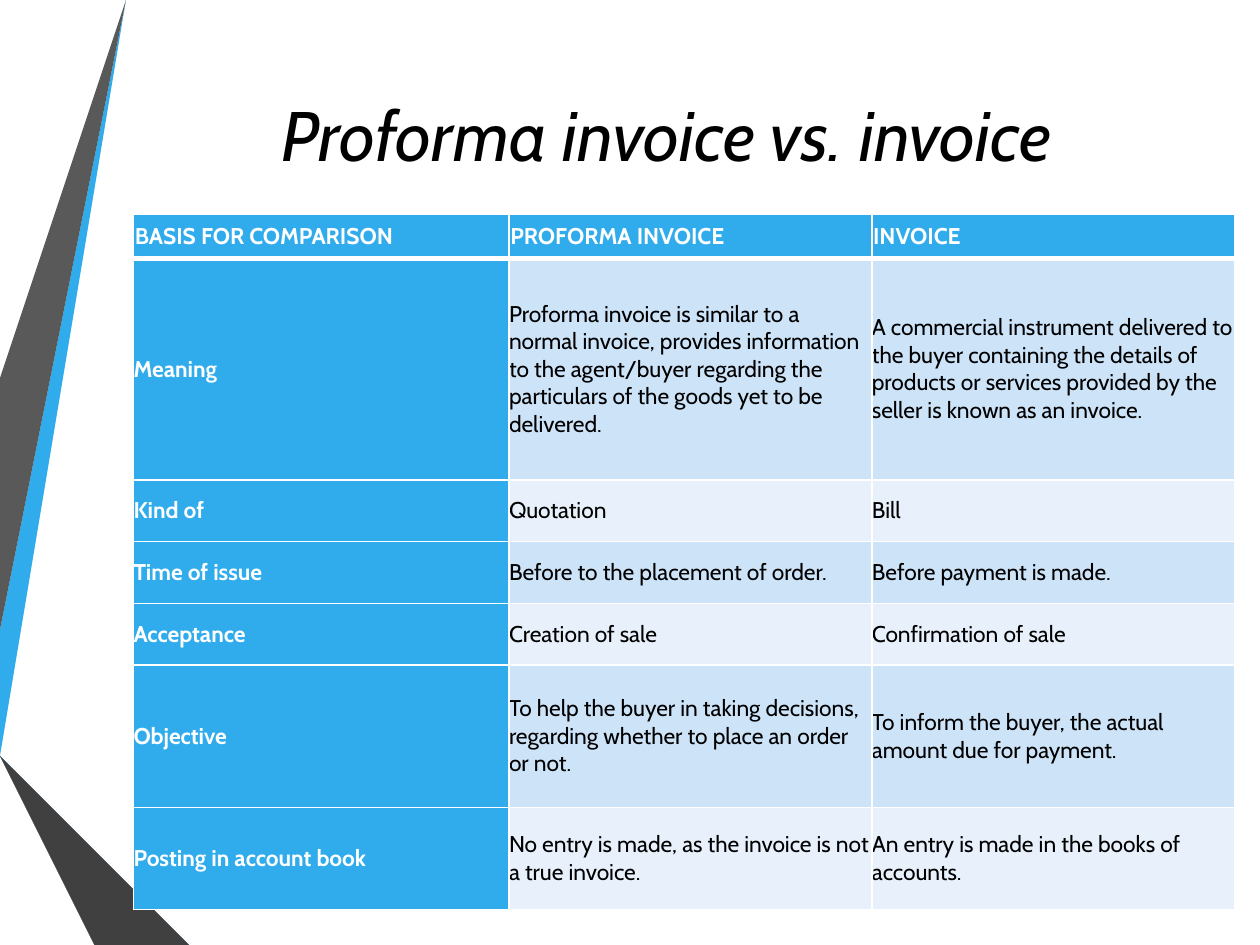
from lxml import etree
from pptx import Presentation
from pptx.dml.color import RGBColor
from pptx.enum.text import MSO_ANCHOR, PP_ALIGN
from pptx.oxml.ns import qn
from pptx.util import Inches, Pt

MIDDLE = MSO_ANCHOR.MIDDLE
CENTER = PP_ALIGN.CENTER
BLUE, WHITE, BLACK = "30ACEC", "FFFFFF", "000000"
BANDS = ["CDE3F8", "E8F1FB"]


def rgb(value):
    return RGBColor.from_string(value)


def write(p, text, color, **formats):
    r = p.add_run()
    r.text = text
    r.font.color.rgb = rgb(color)
    for name, value in {"name": "Cabin", **formats}.items():
        setattr(r.font, name, value)


prs = Presentation()
prs.slide_width, prs.slide_height = Inches(10), Inches(7.5)
s = prs.slides.add_slide(prs.slide_layouts[6])

# Ribbons along the left edge, from back to front, in inches
ribbons = [
    (BLUE, [(0, 5.44), (0, 5.75), (0.22, 5.79), (1.17, 0), (0.89, 0)]),
    ("595959", [(0.83, 0), (0.55, 0), (0, 3.36), (0, 5.06)]),
    ("262626", [(0, 6.19), (0, 6.21), (0.93, 7.5), (0.99, 7.5)]),
    ("0C5A82", [(0, 5.79), (0, 5.8), (1.56, 7.5), (1.63, 7.5)]),
    ("1287C3", [(0, 5.79), (1.63, 7.5), (2.33, 7.5), (0.22, 5.79), (0, 5.75)]),
    ("404040", [(0, 6.19), (0.99, 7.5), (1.51, 7.5), (0, 5.86)]),
]
for color, points in ribbons:
    fb = s.shapes.build_freeform(*points[0], scale=Inches(1))
    fb.add_line_segments(points[1:], close=True)
    sp = fb.convert_to_shape()
    sp.shadow.inherit = False
    sp.fill.solid()
    sp.fill.fore_color.rgb = rgb(color)
    sp.line.fill.background()

# Title
tf = s.shapes.add_textbox(Inches(1.08), Inches(0.5), Inches(8.42), Inches(1.12)).text_frame
tf.word_wrap = True
tf.vertical_anchor = MIDDLE
tf.paragraphs[0].alignment = CENTER
write(tf.paragraphs[0], "Proforma invoice vs. invoice", BLACK, size=Pt(40), italic=True)

# Comparison table
rows = [
    ("BASIS FOR COMPARISON", "PROFORMA INVOICE", "INVOICE"),
    ("Meaning",
     "Proforma invoice is similar to a normal invoice, provides information to the "
     "agent/buyer regarding the particulars of the goods yet to be delivered.",
     "A commercial instrument delivered to the buyer containing the details of products "
     "or services provided by the seller is known as an invoice."),
    ("Kind of", "Quotation", "Bill"),
    ("Time of issue", "Before to the placement of order.", "Before payment is made."),
    ("Acceptance", "Creation of sale", "Confirmation of sale"),
    ("Objective",
     "To help the buyer in taking decisions, regarding whether to place an order or not.",
     "To inform the buyer, the actual amount due for payment."),
    ("Posting in account book",
     "No entry is made, as the invoice is not a true invoice.",
     "An entry is made in the books of accounts."),
]
widths = [2.98, 2.88, 2.88]
heights = [0.35, 1.76, 0.49, 0.49, 0.49, 1.13, 0.81]
table = s.shapes.add_table(len(rows), len(widths), Inches(1.06), Inches(1.7),
                           Inches(sum(widths)), Inches(sum(heights))).table
for column, width in zip(table.columns, widths):
    column.width = Inches(width)

for i, (texts, height) in enumerate(zip(rows, heights)):
    table.rows[i].height = Inches(height)
    for j, text in enumerate(texts):
        cell = table.cell(i, j)
        heading = i == 0 or j == 0
        side, edge = (0.01, 0.01) if i == 0 else (0, 0.06)
        margins = {"left": side, "right": side, "top": edge, "bottom": edge}
        for name, value in margins.items():
            setattr(cell, f"margin_{name}", Inches(value))
        cell.vertical_anchor = MIDDLE

        tc_pr = cell._tc.get_or_add_tcPr()
        for tag in ("lnL", "lnR", "lnT", "lnB"):
            thick = (i, tag) in ((0, "lnB"), (1, "lnT"))
            ln = etree.SubElement(tc_pr, qn(f"a:{tag}"), w=str(Pt(3 if thick else 1)))
            fill = etree.SubElement(ln, qn("a:solidFill"))
            etree.SubElement(fill, qn("a:srgbClr"), val=WHITE)
        cell.fill.solid()
        cell.fill.fore_color.rgb = rgb(BLUE if heading else BANDS[(i - 1) % 2])

        p = cell.text_frame.paragraphs[0]
        p.space_after = Pt(12)
        write(p, text, WHITE if heading else BLACK, size=Pt(13), bold=heading)

prs.save("out.pptx")
